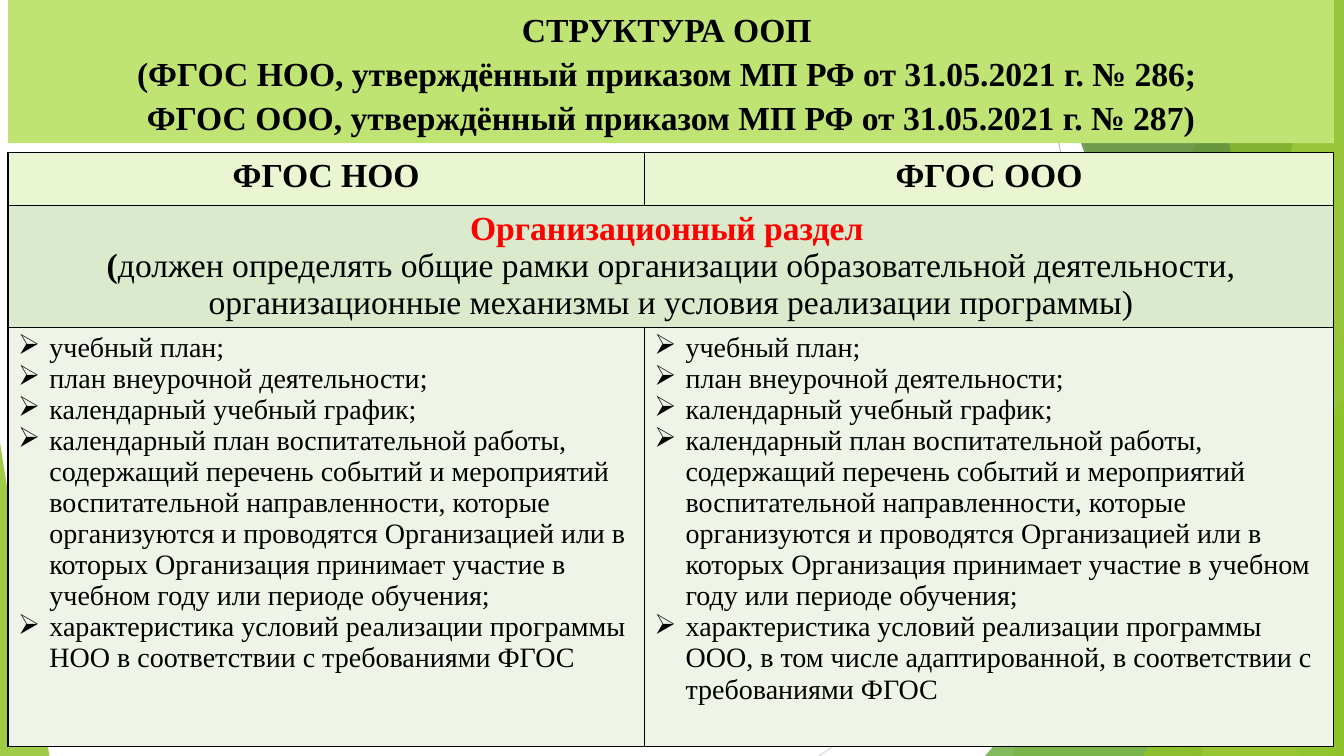
from dataclasses import dataclass

import pptx
import pptx.dml.color
import pptx.enum.shapes
import pptx.enum.text
import pptx.oxml
import pptx.oxml.ns
import pptx.oxml.xmlchemy
import pptx.util

Inches = pptx.util.Inches
Pt = pptx.util.Pt
ALIGN = pptx.enum.text.PP_ALIGN
ANCHOR = pptx.enum.text.MSO_ANCHOR
SHAPES = pptx.enum.shapes.MSO_SHAPE
qn = pptx.oxml.ns.qn
new_element = pptx.oxml.xmlchemy.OxmlElement


@dataclass(frozen=True)
class Theme:
    font: str = "Times New Roman"
    heading_size: int = 24
    list_size: int = 20
    ink: str = "000000"
    accent: str = "FF0000"
    banner: str = "C0E474"
    header: str = "EAF6D1"
    section: str = "DBE9CD"
    body: str = "EEF4E8"
    green: str = "90C226"
    mid_green: str = "54A021"
    dark_green: str = "3F7819"
    lime: str = "C0E474"
    ray: str = "BFBFBF"
    pale_ray: str = "D9D9D9"


THEME = Theme()
WIDTH, HEIGHT = 13.33, 7.5

TITLE_LINES = [
    "СТРУКТУРА ООП ",
    "(ФГОС НОО, утверждённый приказом МП РФ от 31.05.2021 г. № 286; ",
    "ФГОС ООО, утверждённый приказом МП РФ от 31.05.2021 г. № 287)",
]
SECTION_NAME = "Организационный раздел "
SECTION_AIM = (
    "должен определять общие рамки организации образовательной деятельности, "
    "организационные механизмы и условия реализации программы)"
)
SHARED_ITEMS = [
    "учебный план;",
    "план внеурочной деятельности;",
    "календарный учебный график;",
    "календарный план воспитательной работы, содержащий перечень событий и "
    "мероприятий воспитательной направленности, которые организуются и проводятся "
    "Организацией или в которых Организация принимает участие в учебном году или "
    "периоде обучения;",
]
STANDARDS = {
    "ФГОС НОО": "характеристика условий реализации программы НОО в соответствии "
                "с требованиями ФГОС",
    "ФГОС ООО": "характеристика условий реализации программы ООО, в том числе "
                "адаптированной, в соответствии с требованиями ФГОС",
}


def rgb(color):
    return pptx.dml.color.RGBColor.from_string(color)


def paint(shape, color, opacity):
    shape.shadow.inherit = False
    shape.line.fill.background()
    shape.fill.solid()
    shape.fill.fore_color.rgb = rgb(color)
    tint = shape._element.spPr.find(qn("a:solidFill"))[0]
    alpha = new_element("a:alpha")
    alpha.set("val", str(opacity * 1000))
    tint.append(alpha)


def add_run(paragraph, text, size, color=THEME.ink, bold=False):
    run = paragraph.add_run()
    run.text = text
    run.font.name = THEME.font
    run.font.size = Pt(size)
    run.font.bold = bold
    run.font.color.rgb = rgb(color)


def add_backdrop(slide, left, top, width, height):
    right, bottom = left + width, top + height

    def add_ray(start, end, color):
        ray = slide.shapes.add_connector(
            pptx.enum.shapes.MSO_CONNECTOR.STRAIGHT,
            Inches(left + start[0]), Inches(top + start[1]),
            Inches(left + end[0]), Inches(top + end[1]))
        ray.line.color.rgb = rgb(color)
        ray.line.width = Pt(0.75)
        ray._element.spPr.append(new_element("a:effectLst"))

    def add_band(upper, lower, color, opacity):
        outline = slide.shapes.build_freeform(
            Inches(left + upper), Inches(top), scale=1.0)
        corners = [(right, top), (right, bottom), (left + lower, bottom)]
        outline.add_line_segments(
            [(Inches(x), Inches(y)) for x, y in corners], close=True)
        paint(outline.convert_to_shape(), color, opacity)

    def add_wedge(x, wedge_width, wedge_height, apex, color, opacity):
        wedge = slide.shapes.add_shape(
            SHAPES.ISOSCELES_TRIANGLE, Inches(left + x), Inches(bottom - wedge_height),
            Inches(wedge_width), Inches(wedge_height))
        wedge.adjustments[0] = apex
        paint(wedge, color, opacity)

    add_ray((10.25, 0), (11.58, height), THEME.ray)
    add_ray((width, 4.03), (8.12, height), THEME.pale_ray)
    add_band(12.28, 10.04, THEME.green, 30)
    add_band(10.5, 11.83, THEME.green, 20)
    add_wedge(width - 3.56, 3.56, 4.17, 1, THEME.mid_green, 72)
    add_band(10.21, 12.91, THEME.dark_green, 70)
    add_band(13.03, 11.92, THEME.lime, 70)
    add_band(11.96, 13.18, THEME.green, 65)
    add_wedge(width - 1.99, 1.99, 3.57, 1, THEME.green, 80)
    add_wedge(0, 0.49, 3.11, 0, THEME.green, 85)


def add_banner(slide, left, top, width, height):
    banner = slide.shapes.title
    slide.shapes._spTree.append(banner._element)
    banner.left, banner.top = Inches(left), Inches(top)
    banner.width, banner.height = Inches(width), Inches(height)
    banner.fill.solid()
    banner.fill.fore_color.rgb = rgb(THEME.banner)
    frame = banner.text_frame
    frame.word_wrap = True
    frame.auto_size = pptx.enum.text.MSO_AUTO_SIZE.NONE
    frame.vertical_anchor = ANCHOR.TOP
    heading = frame.paragraphs[0]
    heading.alignment = ALIGN.CENTER
    heading.line_spacing = 1.09
    heading.space_before = Pt(0)
    for index, line in enumerate(TITLE_LINES):
        if index:
            heading.add_line_break()
        add_run(heading, line, THEME.heading_size, bold=True)


def style_cell(cell, color):
    cell.fill.solid()
    cell.fill.fore_color.rgb = rgb(color)
    properties = cell._tc.get_or_add_tcPr()
    for index, side in enumerate(("lnL", "lnR", "lnT", "lnB")):
        properties.insert(index, pptx.oxml.parse_xml(
            f'<a:{side} xmlns:a="http://schemas.openxmlformats.org/drawingml/2006/main" '
            f'w="{Pt(1)}"><a:solidFill><a:srgbClr val="{THEME.ink}"/></a:solidFill>'
            f'</a:{side}>'))


def fill_list(frame, items):
    for index, item in enumerate(items):
        entry = frame.add_paragraph() if index else frame.paragraphs[0]
        properties = entry._p.get_or_add_pPr()
        properties.set("marL", str(Inches(0.31)))
        properties.set("indent", str(-Inches(0.31)))
        bullet = new_element("a:buChar")
        bullet.set("char", "➢")
        properties.append(bullet)
        add_run(entry, item, THEME.list_size)


def add_comparison(slide, left, top, column_widths, row_heights):
    table = slide.shapes.add_table(
        len(row_heights), len(column_widths), Inches(left), Inches(top),
        Inches(sum(column_widths)), Inches(sum(row_heights))).table
    for column, width in zip(table.columns, column_widths):
        column.width = Inches(width)
    for row, height, color in zip(
            table.rows, row_heights, (THEME.header, THEME.section, THEME.body)):
        row.height = Inches(height)
        for cell in row.cells:
            style_cell(cell, color)

    for index, (standard, conditions) in enumerate(STANDARDS.items()):
        header = table.cell(0, index).text_frame.paragraphs[0]
        header.alignment = ALIGN.CENTER
        add_run(header, standard, THEME.heading_size, bold=True)
        fill_list(table.cell(2, index).text_frame, SHARED_ITEMS + [conditions])

    section = table.cell(1, 0)
    section.merge(table.cell(1, 1))
    name = section.text_frame.paragraphs[0]
    aim = section.text_frame.add_paragraph()
    name.alignment = aim.alignment = ALIGN.CENTER
    add_run(name, SECTION_NAME, THEME.heading_size, THEME.accent, bold=True)
    add_run(aim, "(", THEME.heading_size, bold=True)
    add_run(aim, SECTION_AIM, THEME.heading_size)


def main():
    deck = pptx.Presentation()
    deck.slide_width, deck.slide_height = Inches(WIDTH), Inches(HEIGHT)
    slide = deck.slides.add_slide(deck.slide_layouts.get_by_name("Title Only"))
    add_backdrop(slide, 0, 0, WIDTH, HEIGHT)
    add_banner(slide, 0.08, 0, 13.15, 1.42)
    add_comparison(slide, 0.08, 1.51, (6.31, 6.84), (0.53, 1.2, 4.16))
    deck.save("out.pptx")


if __name__ == "__main__":
    main()
